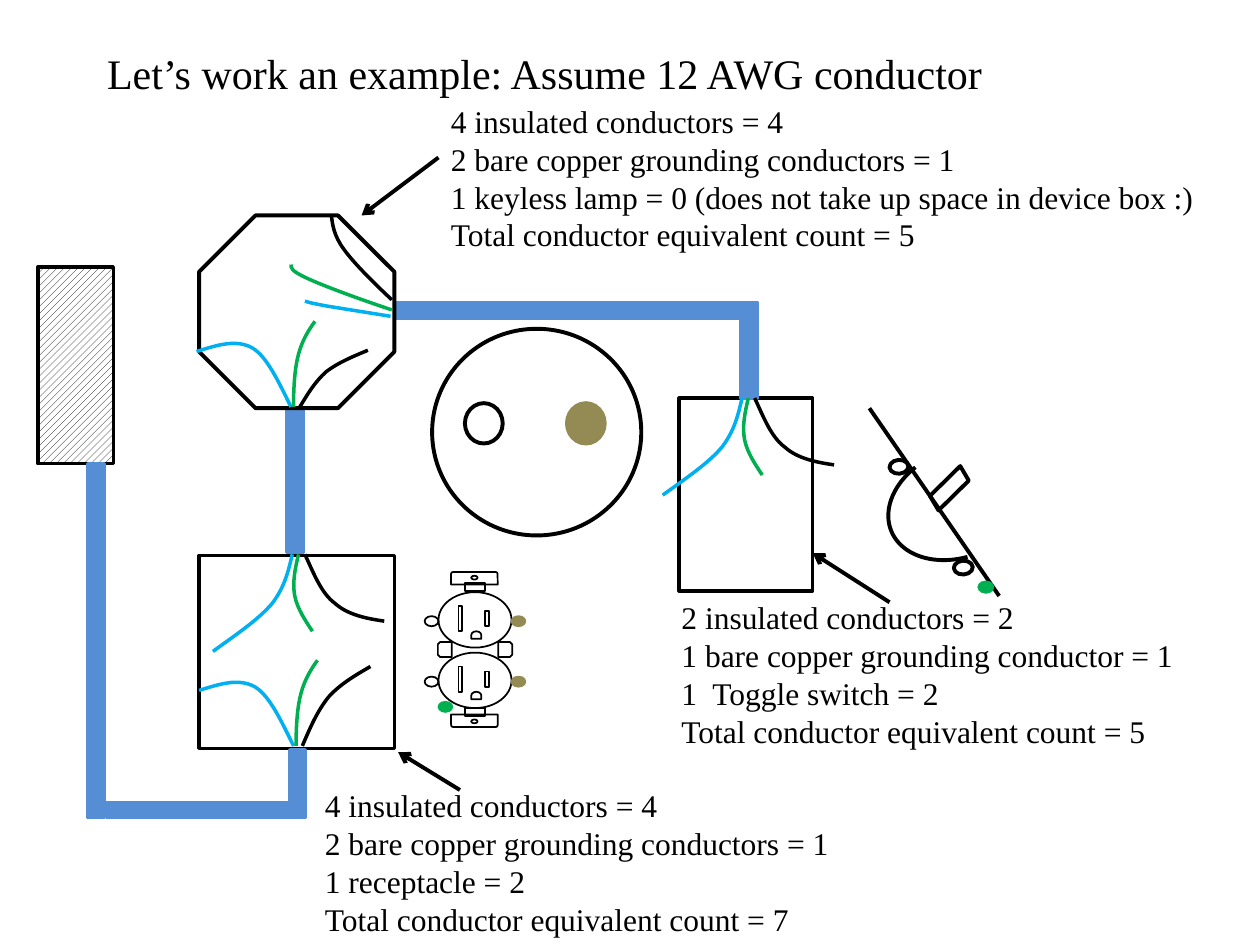
"""Build the box-fill example slide: wiring diagram with conductor counts."""
from lxml import etree
from pptx import Presentation, util as u
from pptx.dml.color import RGBColor
from pptx.enum import dml, shapes, text
from pptx.oxml.ns import qn

THEME = {
    "font": "Times New Roman", "title": 24, "note": 18,
    "black": "000000", "white": "FFFFFF", "cable": "558ED5",
    "neutral": "00B0F0", "ground": "00B050", "brass": "948A54",
    "thin": 1, "wire": 2, "bold": 2.25,
}
KIND = shapes.MSO_SHAPE

TITLE = ("Let’s work an example: Assume 12 AWG conductor", (0.75, 0.33, 7.92, 0.5))
NOTES = [
    ((2.48, 6.19, 4.35, 1.31), (3.65, 6.27, 3.16, 5.97),
     ["4 insulated conductors = 4", "2 bare copper grounding conductors = 1",
      "1 receptacle = 2", "Total conductor equivalent count = 7"]),
    ((3.48, 0.76, 6.32, 1.31), (3.48, 1.25, 2.87, 1.71),
     ["4 insulated conductors = 4", "2 bare copper grounding conductors = 1",
      "1 keyless lamp = 0 (does not take up space in device box :)",
      "Total conductor equivalent count = 5"]),
    ((5.31, 4.7, 4.48, 1.31), (7.06, 4.78, 6.45, 4.39),
     ["2 insulated conductors = 2", "1 bare copper grounding conductor = 1",
      "1  Toggle switch = 2", "Total conductor equivalent count = 5"]),
]

DEVICE_BOXES = [(1.58, 4.41, 1.55, 1.53), (5.39, 3.16, 1.06, 1.53)]
OCTAGON_BOX = (1.58, 1.71, 1.55, 1.53)
PANEL = (0.3, 2.12, 0.6, 1.56)
CABLES = [
    (2.28, 3.05, 0.13, 1.33), (0.85, 6.37, 1.49, 0.12), (0.7, 3.68, 0.13, 2.81),
    (5.88, 2.4, 0.13, 0.76), (3.13, 2.4, 2.86, 0.13), (2.3, 5.95, 0.12, 0.54),
]

OUTLET_PITCH = 0.48
OUTLET = [
    (KIND.OVAL, (3.48, 4.7, 0.58, 0.44), 0, None),
    (KIND.RECTANGLE, (3.64, 4.81, 0.03, 0.2), 0, None),
    (KIND.RECTANGLE, (3.85, 4.85, 0.03, 0.12), 0, None),
    (KIND.FLOWCHART_DELAY, (3.75, 5, 0.06, 0.08), 270, None),
    (KIND.OVAL, (3.37, 4.89, 0.11, 0.08), 0, None),
    (KIND.OVAL, (4.06, 4.89, 0.11, 0.08), 0, "brass"),
]
STRAP_MIRROR = 10.31
STRAP = [
    (KIND.ROUND_2_SAME_RECTANGLE, (3.58, 4.54, 0.37, 0.1)),
    (KIND.RECTANGLE, (3.69, 4.63, 0.16, 0.06)),
    (KIND.OVAL, (3.74, 4.57, 0.05, 0.03)),
]
OUTLET_BRIDGE = [((3.95, 5.1, 0.12, 0.11), 90), ((3.47, 5.1, 0.12, 0.11), 270)]
OUTLET_GROUND = (3.48, 5.57, 0.11, 0.08)

TOGGLE_ARC = (7.03, 3.57, 1.16, 0.85)
TOGGLE_PLATE = (6.9, 3.24, 7.93, 4.73)
TOGGLE_LEVER = (7.35, 3.81, 0.37, 0.13)
TOGGLE_SCREWS = [(7.57, 4.45, 0.15, 0.11), (7.06, 3.65, 0.15, 0.11)]
TOGGLE_GROUND = (7.76, 4.61, 0.13, 0.1)
LAMP = [((3.43, 2.61, 1.66, 1.64), None), ((3.69, 3.2, 0.3, 0.32), None),
        ((4.5, 3.2, 0.3, 0.32), "brass")]

FROM_ABOVE = [
    ("neutral", [(-.05, 0), (-.08, .13), (-.11, .26), (-.21, .39), (-.32, .52), (-.5, .64), (-.68, .77)]),
    ("ground", [(0, 0), (-.03, .12), (-.05, .23), (-.03, .33), (-.01, .43), (.05, .52), (.11, .61)]),
    ("black", [(.05, 0), (.12, .15), (.18, .31), (.29, .39), (.39, .48), (.54, .51), (.68, .53)]),
]
FROM_BELOW = [
    ("neutral", [(-.02, 0), (-.12, -.2), (-.21, -.4), (-.33, -.47), (-.46, -.54), (-.61, -.49), (-.77, -.44)]),
    ("ground", [(0, 0), (0, -.16), (.01, -.31), (.04, -.42), (.07, -.53), (.12, -.61), (.17, -.68)]),
]
RECEPTACLE_HOT = [
    ("black", [(2.4, 5.92), (2.46, 5.78), (2.52, 5.64), (2.61, 5.53), (2.7, 5.43), (2.82, 5.36), (2.94, 5.29)]),
]
LAMP_WIRES = [
    ("black", [(2.38, 3.23), (2.44, 3.13), (2.5, 3.03), (2.59, 2.95), (2.68, 2.88), (2.8, 2.83), (2.92, 2.78)]),
    ("black", [(3.11, 2.38), (2.96, 2.24), (2.81, 2.09), (2.73, 1.98), (2.65, 1.87), (2.64, 1.79), (2.63, 1.71)]),
    ("ground", [(3.11, 2.46), (2.84, 2.37), (2.57, 2.27), (2.44, 2.21), (2.31, 2.15), (2.31, 2.13), (2.31, 2.1)]),
    ("neutral", [(3.1, 2.51), (2.6, 2.43), (2.49, 2.41), (2.45, 2.4), (2.42, 2.39)]),
]

deck = Presentation()
deck.slide_width, deck.slide_height = u.Inches(10), u.Inches(7.5)
slide = deck.slides.add_slide(deck.slide_layouts[5])


def color(name):
    return RGBColor.from_string(THEME[name])


def inches(values):
    return [u.Inches(value) for value in values]


def stroke(part, name, weight):
    part.line.color.rgb = color(name)
    part.line.width = u.Pt(weight)


def write(frame, lines, size, name="black"):
    frame.word_wrap = True
    frame.auto_size = text.MSO_AUTO_SIZE.NONE
    frame.vertical_anchor = text.MSO_ANCHOR.TOP
    for index, line in enumerate(lines):
        paragraph = frame.add_paragraph() if index else frame.paragraphs[0]
        paragraph.alignment = text.PP_ALIGN.LEFT
        run = paragraph.add_run()
        run.text = line
        run.font.name, run.font.size = THEME["font"], u.Pt(size)
        run.font.color.rgb = color(name)


def draw(kind, box, fill=None, line="black", weight=THEME["thin"], turn=0):
    part = slide.shapes.add_shape(kind, *inches(box))
    part.shadow.inherit = False
    part.rotation = turn
    if fill:
        part.fill.solid()
        part.fill.fore_color.rgb = color(fill)
    else:
        part.fill.background()
    stroke(part, line, weight)
    return part


def connect(ends, arrow=False):
    part = slide.shapes.add_connector(shapes.MSO_CONNECTOR.STRAIGHT, *inches(ends))
    stroke(part, "black", THEME["bold"])
    properties = part._element.spPr
    if arrow:
        etree.SubElement(properties.find(qn("a:ln")), qn("a:tailEnd"), type="arrow")
    etree.SubElement(properties, qn("a:effectLst"))


def bend(wire):
    """Join each three line steps, counted from the end, into one cubic curve."""
    steps = list(wire._element.iter(qn("a:lnTo")))
    for start in range(len(steps) % 3, len(steps), 3):
        first, *others = steps[start:start + 3]
        curve = etree.Element(qn("a:cubicBezTo"))
        first.addprevious(curve)
        for step in (first, *others):
            curve.append(step[0])
            step.getparent().remove(step)


def run_wires(wires, entry=(0, 0)):
    for name, controls in wires:
        points = [inches((x + entry[0], y + entry[1])) for x, y in controls]
        builder = slide.shapes.build_freeform(*points[0])
        builder.add_line_segments(points[1:], close=False)
        wire = builder.convert_to_shape()
        bend(wire)
        wire.shadow.inherit = False
        wire.fill.background()
        stroke(wire, name, THEME["wire"])


def draw_receptacle():
    for row in range(2):
        for kind, (x, y, w, h), turn, fill in OUTLET:
            draw(kind, (x, y + row * OUTLET_PITCH, w, h), fill, fill or "black", turn=turn)
    for kind, (x, y, w, h) in STRAP:
        draw(kind, (x, y, w, h))
        draw(kind, (x, STRAP_MIRROR - y - h, w, h), turn=180)
    for box, turn in OUTLET_BRIDGE:
        draw(KIND.SNIP_2_SAME_RECTANGLE, box, turn=turn)
    draw(KIND.OVAL, OUTLET_GROUND, "ground", "ground")


def draw_toggle():
    bold = THEME["bold"]
    arc = draw(KIND.ARC, TOGGLE_ARC, weight=bold, turn=157.7)
    arc.adjustments[0], arc.adjustments[1] = 169.91, 37.19
    connect(TOGGLE_PLATE)
    for screw in TOGGLE_SCREWS:
        draw(KIND.OVAL, screw, "white", weight=bold, turn=356)
    draw(KIND.PARALLELOGRAM, TOGGLE_LEVER, weight=bold, turn=315.4)
    draw(KIND.OVAL, TOGGLE_GROUND, "ground", "ground", 0.25)


heading = slide.shapes.title
heading.left, heading.top, heading.width, heading.height = inches(TITLE[1])
write(heading.text_frame, [TITLE[0]], THEME["title"])

for device_box in DEVICE_BOXES:
    draw(KIND.RECTANGLE, device_box, weight=THEME["wire"])
draw_receptacle()
panel = draw(KIND.RECTANGLE, PANEL, weight=THEME["wire"])
panel.fill.patterned()
panel.fill.pattern = dml.MSO_PATTERN.WIDE_UPWARD_DIAGONAL
panel.fill.fore_color.rgb, panel.fill.back_color.rgb = color("black"), color("white")
for cable in CABLES:
    draw(KIND.RECTANGLE, cable, "cable", "cable", THEME["wire"])
draw(KIND.OCTAGON, OCTAGON_BOX, "white", weight=THEME["bold"])
draw_toggle()
for bundle, entry in [(FROM_ABOVE, (2.37, 4.4)), (FROM_BELOW, (2.35, 5.92)), (RECEPTACLE_HOT, (0, 0)),
                      (FROM_BELOW, (2.33, 3.23)), (LAMP_WIRES, (0, 0)), (FROM_ABOVE, (5.94, 3.16))]:
    run_wires(bundle, entry)
for lamp_part, fill in LAMP:
    draw(KIND.OVAL, lamp_part, fill, fill or "black", THEME["bold"])
for box, pointer, lines in NOTES:
    write(slide.shapes.add_textbox(*inches(box)).text_frame, lines, THEME["note"])
    connect(pointer, arrow=True)

deck.save("out.pptx")
